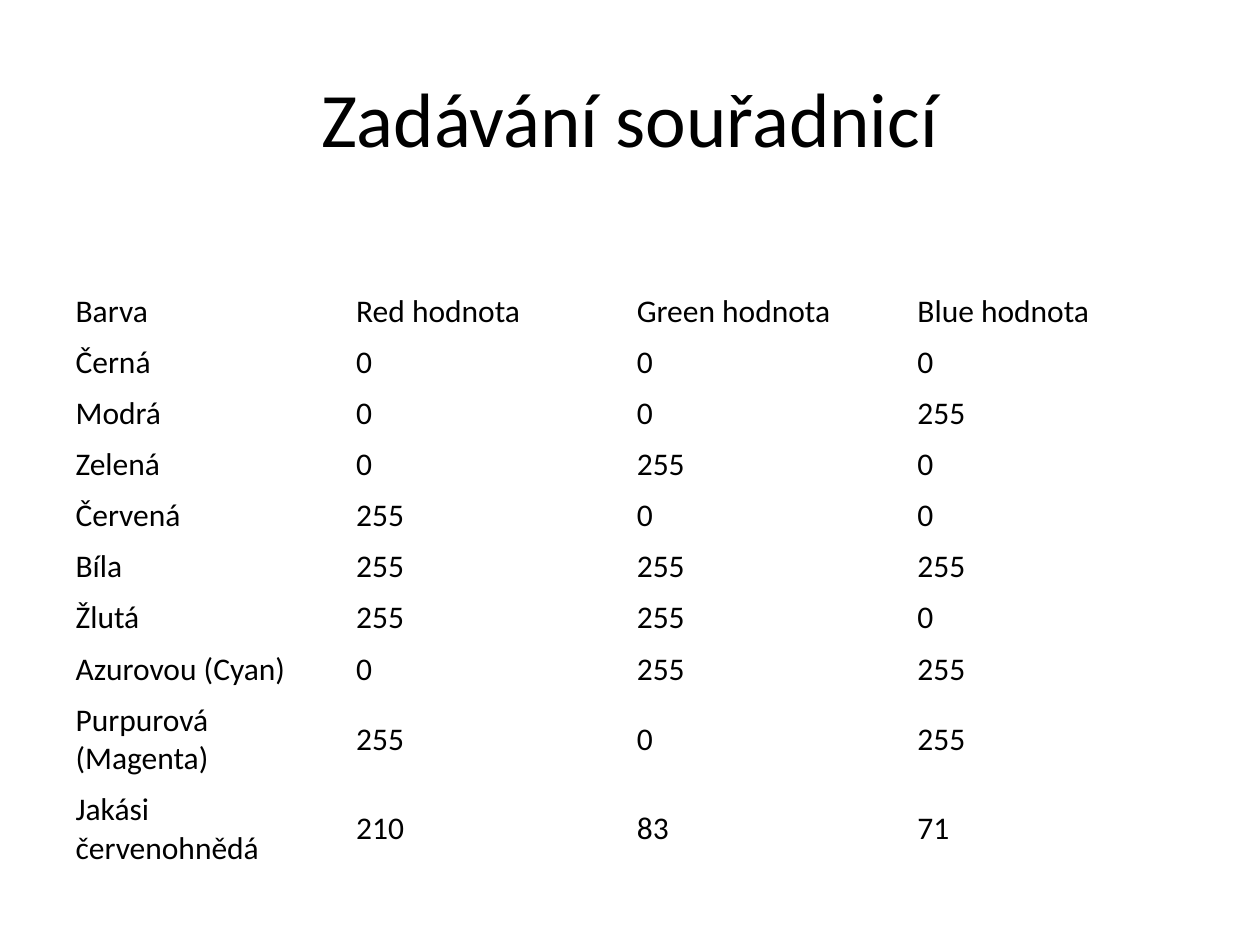
"""Build a slide with a table of RGB colour coordinates."""
from dataclasses import dataclass

from pptx import Presentation
from pptx.dml.color import RGBColor
from pptx.enum.text import MSO_ANCHOR, PP_ALIGN
from pptx.util import Inches, Pt

MIDDLE = MSO_ANCHOR.MIDDLE
LEFT = PP_ALIGN.LEFT
CENTER = PP_ALIGN.CENTER
TITLE_ONLY = 5

COLOR_ROWS = [
    ("Barva", "Red hodnota", "Green hodnota", "Blue hodnota"),
    ("Černá", 0, 0, 0),
    ("Modrá", 0, 0, 255),
    ("Zelená", 0, 255, 0),
    ("Červená", 255, 0, 0),
    ("Bíla", 255, 255, 255),
    ("Žlutá", 255, 255, 0),
    ("Azurovou (Cyan)", 0, 255, 255),
    ("Purpurová (Magenta)", 255, 0, 255),
    ("Jakási červenohnědá", 210, 83, 71),
]
ROW_HEIGHTS = [0.39] * 8 + [0.69] * 2


@dataclass(frozen=True)
class Theme:
    """Colours, font and type sizes of the slide."""

    font: str = "Calibri"
    text: RGBColor = RGBColor(0, 0, 0)
    background: RGBColor = RGBColor(255, 255, 255)
    title_size: int = 44
    table_size: int = 18


class SlideBuilder:
    """Place styled elements on the current slide."""

    def __init__(self, slide, theme):
        """Keep the slide and theme, and paint the background."""
        self.slide = slide
        self.theme = theme
        fill = slide.background.fill
        fill.solid()
        fill.fore_color.rgb = theme.background

    def set_text(self, text_frame, text, size, alignment):
        """Set the text of a frame and format its runs."""
        text_frame.text = text
        for paragraph in text_frame.paragraphs:
            paragraph.alignment = alignment
            for run in paragraph.runs:
                run.font.name = self.theme.font
                run.font.size = Pt(size)
                run.font.color.rgb = self.theme.text

    def add_title(self, text, left, top, width, height):
        """Move and fill the title placeholder."""
        title = self.slide.shapes.title
        title.left, title.top = Inches(left), Inches(top)
        title.width, title.height = Inches(width), Inches(height)
        self.set_text(title.text_frame, text, self.theme.title_size, CENTER)
        title.text_frame.vertical_anchor = MIDDLE

    def add_table(self, rows, row_heights, left, top, width):
        """Add a plain table with equal columns."""
        table = self.slide.shapes.add_table(
            len(rows), len(rows[0]), Inches(left), Inches(top),
            Inches(width), Inches(sum(row_heights))).table
        table.first_row = False
        table.horz_banding = False
        for row, values, height in zip(table.rows, rows, row_heights):
            row.height = Inches(height)
            for cell, value in zip(row.cells, values):
                cell.fill.background()
                cell.vertical_anchor = MIDDLE
                self.set_text(cell.text_frame, str(value), self.theme.table_size, LEFT)


def main():
    """Create and save the presentation."""
    presentation = Presentation()
    presentation.slide_width = Inches(10)
    presentation.slide_height = Inches(7.5)
    slide = presentation.slides.add_slide(presentation.slide_layouts[TITLE_ONLY])
    builder = SlideBuilder(slide, Theme())
    builder.add_title("Zadávání souřadnicí", 0.5, 0.3, 9, 1.25)
    builder.add_table(COLOR_ROWS, ROW_HEIGHTS, 0.5, 2.27, 8.91)
    presentation.save("out.pptx")


if __name__ == "__main__":
    main()
